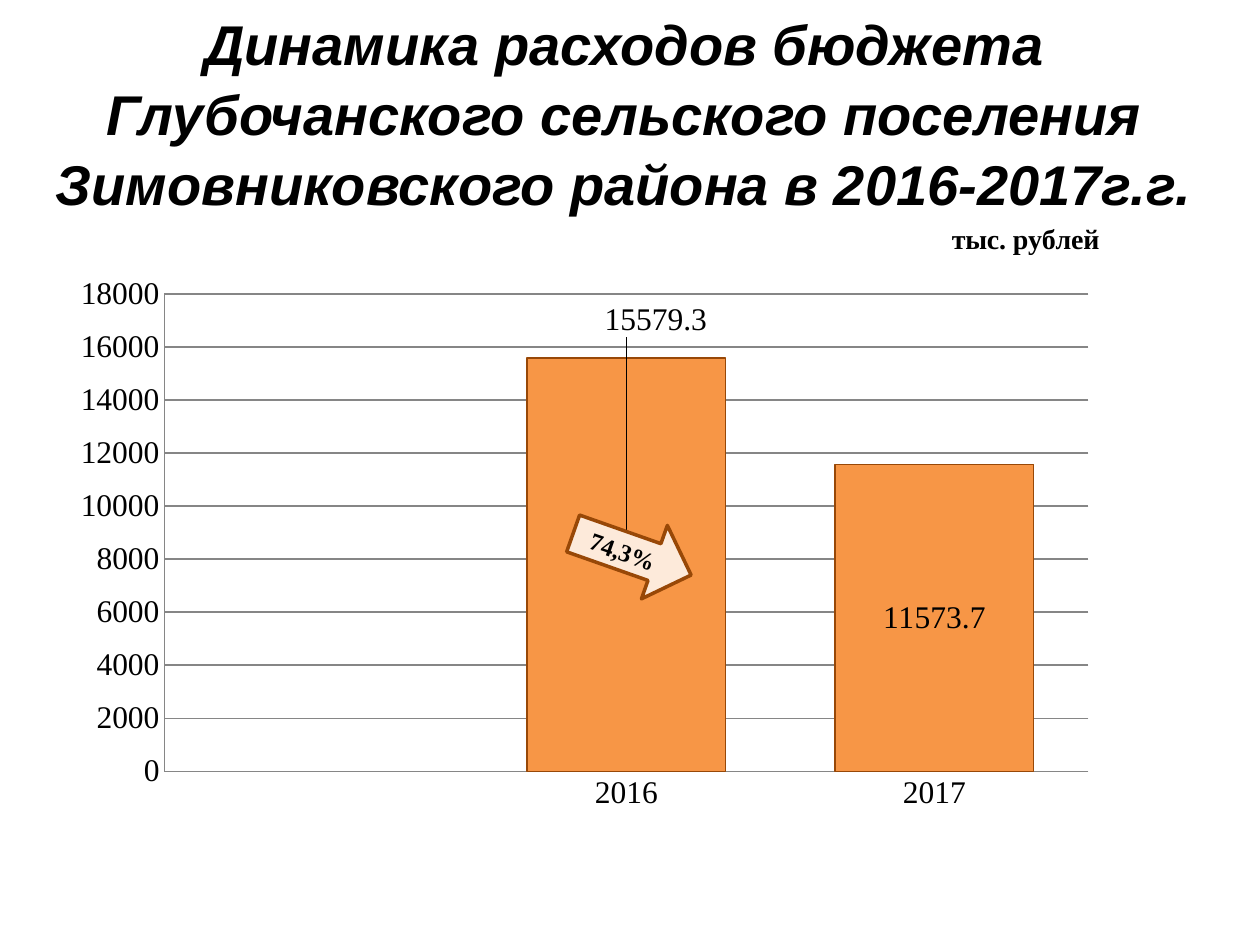
import pptx
import pptx.chart.data
import pptx.dml.color
import pptx.enum.chart
import pptx.enum.shapes
import pptx.enum.text
import pptx.oxml
import pptx.oxml.ns
import pptx.util

Pt = pptx.util.Pt


def color(value):
    return pptx.dml.color.RGBColor.from_string(value)


def manual_layout(x, y, size=None):
    """Chart layout element, in fractions of the chart area."""
    inner = size is not None
    parts = ['<c:layoutTarget val="inner"/>'] if inner else []
    if inner:
        parts.append('<c:xMode val="edge"/><c:yMode val="edge"/>')
    parts.append(f'<c:x val="{x}"/><c:y val="{y}"/>')
    if inner:
        parts.append(f'<c:w val="{size[0]}"/><c:h val="{size[1]}"/>')
    namespace = pptx.oxml.ns.nsdecls("c")
    return pptx.oxml.parse_xml(
        f'<c:layout {namespace}><c:manualLayout>{"".join(parts)}</c:manualLayout></c:layout>')


class BudgetSlide:
    heading_font = "Arial"
    text_font = "Times New Roman"
    ink, grid, bar = "000000", "868686", "F79646"
    outline, pale = "984807", "FDEADA"

    def __init__(self, deck):
        self.page = deck.slides.add_slide(deck.slide_layouts[5])

    def style(self, font, name, size, bold=False, italic=False):
        font.name, font.size = name, Pt(size)
        font.bold, font.italic = bold, italic
        font.color.rgb = color(self.ink)

    def line(self, line, value, width):
        line.color.rgb = color(value)
        line.width = Pt(width)

    def title(self, text, left, top, width, height):
        box = self.page.shapes.title
        box.left, box.top, box.width, box.height = map(Pt, (left, top, width, height))
        frame = box.text_frame
        frame.word_wrap = True
        frame.auto_size = pptx.enum.text.MSO_AUTO_SIZE.NONE
        frame.vertical_anchor = pptx.enum.text.MSO_ANCHOR.MIDDLE
        frame.margin_top, frame.margin_bottom = 0, Pt(12)
        para = frame.paragraphs[0]
        para.alignment = pptx.enum.text.PP_ALIGN.CENTER
        para.line_spacing = 1.04
        span = para.add_run()
        span.text = text
        self.style(span.font, self.heading_font, 32, bold=True, italic=True)

    def column_chart(self, unit, categories, values, left, top, width, height):
        data = pptx.chart.data.CategoryChartData()
        data.categories = categories
        data.add_series("Series 1", values)
        chart = self.page.shapes.add_chart(
            pptx.enum.chart.XL_CHART_TYPE.COLUMN_STACKED,
            Pt(left), Pt(top), Pt(width), Pt(height), data).chart
        self.style(chart.font, self.text_font, 18)
        chart.has_legend = False
        plot_area = chart._chartSpace.chart.plotArea
        for old in plot_area.xpath("./c:layout"):
            plot_area.remove(old)
        plot_area.insert(0, manual_layout(0.1, 0.155, (0.88, 0.762)))

        # Unit caption, used as the chart title
        chart.has_title = True
        span = chart.chart_title.text_frame.paragraphs[0].add_run()
        span.text = unit
        self.style(span.font, self.text_font, 16, bold=True)
        title = chart.chart_title._element
        for old in title.xpath("./c:layout"):
            title.remove(old)
        place = manual_layout(0.845, 0.03)
        for name in ("yMode", "xMode"):
            place[0].insert(0, pptx.oxml.parse_xml(
                f'<c:{name} {pptx.oxml.ns.nsdecls("c")} val="edge"/>'))
        title.xpath("./c:tx")[0].addnext(place)

        # Axes
        scale = chart.value_axis
        scale.minimum_scale, scale.maximum_scale, scale.major_unit = 0, 18000, 2000
        scale.has_major_gridlines = True
        self.line(scale.major_gridlines.format.line, self.grid, 0.75)
        for axis in (chart.category_axis, scale):
            axis.major_tick_mark = pptx.enum.chart.XL_TICK_MARK.NONE
            axis.minor_tick_mark = pptx.enum.chart.XL_TICK_MARK.NONE
            self.line(axis.format.line, self.grid, 0.75)
            self.style(axis.tick_labels.font, self.text_font, 18)

        # Bars and their values
        plot = chart.plots[0]
        plot.vary_by_categories = False
        plot.gap_width, plot.overlap = 55, 100
        series = plot.series[0]
        series.format.fill.solid()
        series.format.fill.fore_color.rgb = color(self.bar)
        self.line(series.format.line, self.outline, 0.75)
        labels = series.data_labels
        labels.show_value = True
        self.style(labels.font, self.text_font, 18)

        # The 2016 value stands above its bar
        self.style(series.points[1].data_label.font, self.text_font, 18)
        label = chart._chartSpace.xpath(".//c:dLbl")[0]
        label.insert(1, manual_layout(0.028, -0.39))

    def arrow(self, text, left, top, width, height, angle):
        shape = self.page.shapes.add_shape(
            pptx.enum.shapes.MSO_SHAPE.RIGHT_ARROW,
            Pt(left), Pt(top), Pt(width), Pt(height))
        shape.rotation = angle
        shape.shadow.inherit = False
        shape.fill.solid()
        shape.fill.fore_color.rgb = color(self.pale)
        self.line(shape.line, self.outline, 2)
        frame = shape.text_frame
        frame.word_wrap = True
        frame.vertical_anchor = pptx.enum.text.MSO_ANCHOR.MIDDLE
        para = frame.paragraphs[0]
        para.alignment = pptx.enum.text.PP_ALIGN.CENTER
        span = para.add_run()
        span.text = text
        self.style(span.font, self.text_font, 14, bold=True)


def main():
    deck = pptx.Presentation()
    deck.slide_width, deck.slide_height = Pt(720), Pt(540)
    slide = BudgetSlide(deck)
    slide.title("Динамика расходов бюджета Глубочанского сельского поселения "
                "Зимовниковского района в 2016-2017г.г.", 16.5, 16.5, 680.5, 106.5)
    slide.column_chart("тыс. рублей", ["", "2016", "2017"], [None, 15579.3, 11573.7],
                       34, 112.5, 600, 358)
    slide.arrow("74,3%", 325.5, 294.5, 71.5, 44.5, 19.4)
    deck.save("out.pptx")


if __name__ == "__main__":
    main()
